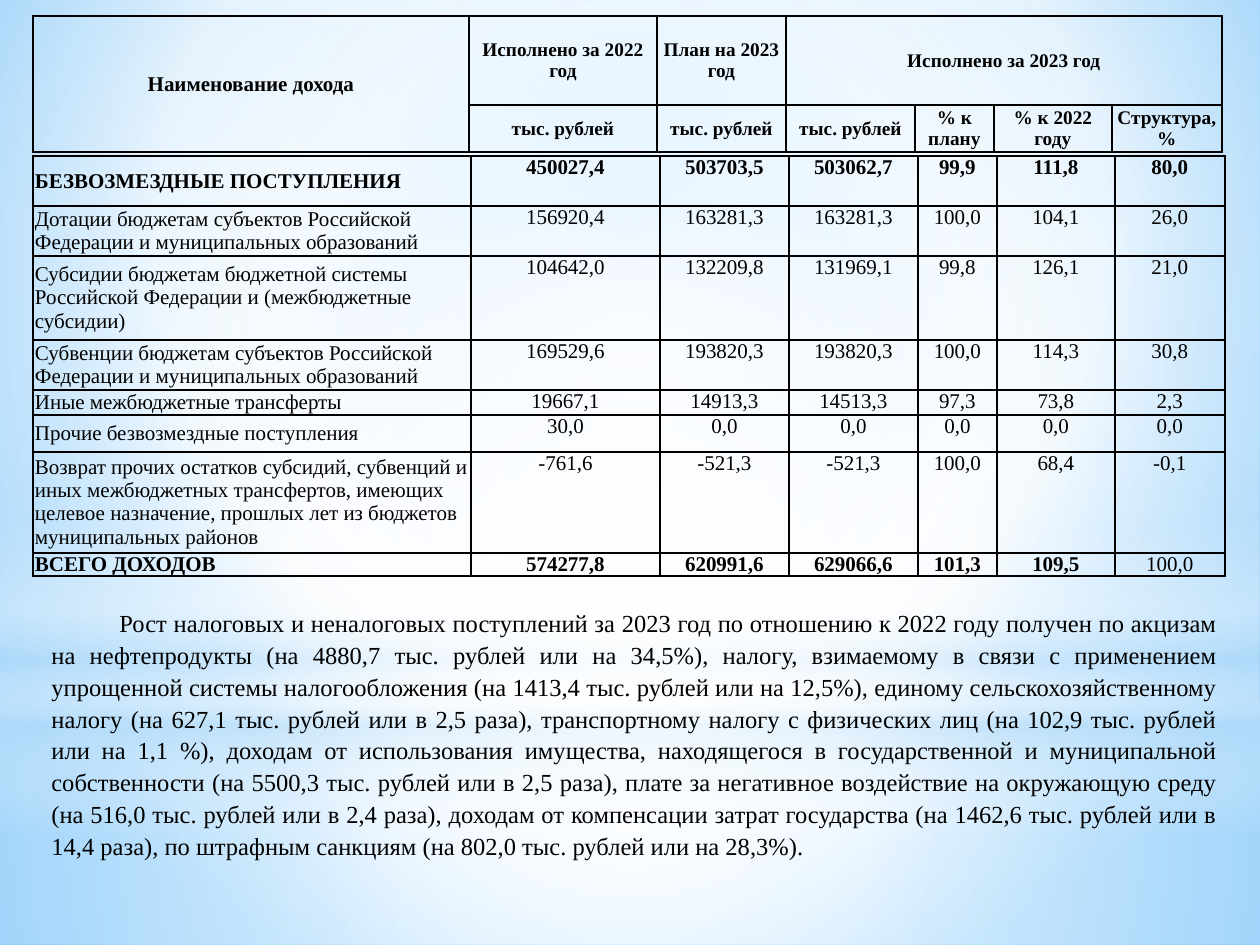
"""Builds the slide on non-tax transfers: a header table, a data table and a comment."""
from pptx import Presentation
from pptx.dml.color import RGBColor
from pptx.enum.shapes import MSO_SHAPE as SHAPE
from pptx.enum.text import MSO_ANCHOR as ANCHOR, PP_ALIGN as ALIGN
from pptx.oxml import parse_xml
from pptx.oxml.ns import nsdecls, qn
from pptx.util import Pt

THEME = {"font": "Times New Roman", "ink": "000000", "white": "FFFFFF", "sky": "B4DCFA",
         "bg_light": "9ED5FF", "bg_deep": "5BB9FF",
         "table": 12, "header": 11, "body": 14, "border": 1}
WHITE, SKY = THEME["white"], THEME["sky"]
SCALE = 914400 / 126
WIDTH, HEIGHT = 1260, 945
CENTRE = (50, 50, 50, 50)

BG_STOPS = [(0, THEME["bg_light"], 100), (60, WHITE, 100), (100, THEME["bg_deep"], 100)]
LAYERS = [
    (SHAPE.RECTANGLE, (0, 703, WIDTH, 242), CENTRE,
     [(0, WHITE, 91), (37, WHITE, 76), (100, SKY, 79)]),
    (SHAPE.RECTANGLE, (0, 0, WIDTH, 703), CENTRE,
     [(0, WHITE, 89), (48, WHITE, 62), (100, SKY, 79)]),
    (SHAPE.RECTANGLE, (0, 519, WIDTH, 315), None,
     [(0, WHITE, 0), (29, WHITE, 30), (45, SKY, 40), (55, WHITE, 26), (65, SKY, 60),
      (100, WHITE, 0)]),
    (SHAPE.OVAL, (0, 220, WIDTH, 703), CENTRE, [(0, WHITE, 100), (56, WHITE, 0)]),
]

HEADER = [
    ["Наименование дохода", "Исполнено за 2022 год", "План на 2023 год",
     "Исполнено за 2023 год", "", "", ""],
    ["", "тыс. рублей", "тыс. рублей", "тыс. рублей", "% к плану", "% к 2022 году",
     "Структура, %"],
]
HEADER_SPANS = [((0, 0), (1, 0)), ((0, 3), (0, 6))]
INCOME = [
    ["БЕЗВОЗМЕЗДНЫЕ ПОСТУПЛЕНИЯ",
     "450027,4", "503703,5", "503062,7", "99,9", "111,8", "80,0"],
    ["Дотации бюджетам субъектов Российской Федерации и муниципальных образований",
     "156920,4", "163281,3", "163281,3", "100,0", "104,1", "26,0"],
    ["Субсидии бюджетам бюджетной системы Российской Федерации и (межбюджетные субсидии)",
     "104642,0", "132209,8", "131969,1", "99,8", "126,1", "21,0"],
    ["Субвенции бюджетам субъектов Российской Федерации и муниципальных образований",
     "169529,6", "193820,3", "193820,3", "100,0", "114,3", "30,8"],
    ["Иные межбюджетные трансферты",
     "19667,1", "14913,3", "14513,3", "97,3", "73,8", "2,3"],
    ["Прочие безвозмездные поступления", "30,0", "0,0", "0,0", "0,0", "0,0", "0,0"],
    ["Возврат прочих остатков субсидий, субвенций и иных межбюджетных трансфертов, "
     "имеющих целевое назначение, прошлых лет из бюджетов муниципальных районов",
     "-761,6", "-521,3", "-521,3", "100,0", "68,4", "-0,1"],
    ["ВСЕГО ДОХОДОВ", "574277,8", "620991,6", "629066,6", "101,3", "109,5", "100,0"],
]
COMMENT = (
    "Рост налоговых и неналоговых поступлений за 2023 год по отношению к 2022 году получен "
    "по акцизам на нефтепродукты (на 4880,7 тыс. рублей или на 34,5%), налогу, взимаемому в "
    "связи с применением упрощенной системы налогообложения (на 1413,4 тыс. рублей или на "
    "12,5%), единому сельскохозяйственному налогу (на 627,1 тыс. рублей или в 2,5 раза), "
    "транспортному налогу с физических лиц (на 102,9 тыс. рублей или на 1,1 %), доходам от "
    "использования имущества, находящегося в государственной и муниципальной собственности "
    "(на 5500,3 тыс. рублей или в 2,5 раза), плате за негативное воздействие на окружающую "
    "среду (на 516,0 тыс. рублей или в 2,4 раза), доходам от компенсации затрат государства "
    "(на 1462,6 тыс. рублей или в 14,4 раза), по штрафным санкциям (на 802,0 тыс. рублей "
    "или на 28,3%).")

VALUE_COLS = [129, 129, 79, 118, 110]
HEADER_GRID = {"left": 33, "top": 16, "cols": [436, 188] + VALUE_COLS, "rows": [89, 47]}
INCOME_GRID = {"left": 33, "top": 156, "cols": [438, 189] + VALUE_COLS,
               "rows": [50, 50, 84, 50, 25, 37, 101, 22]}
COMMENT_BOX = (39, 600, 1191, 251)


def px(n):
    return int(n * SCALE)


def assign(obj, values):
    for name, value in values.items():
        setattr(obj, name, value)


def paint(holder, stops, focus):
    """Swap the empty fill of an element for a gradient."""
    gs = "".join(f'<a:gs pos="{pos * 1000}"><a:srgbClr val="{color}">'
                 f'<a:alpha val="{alpha * 1000}"/></a:srgbClr></a:gs>'
                 for pos, color, alpha in stops)
    shade = '<a:lin ang="5400000" scaled="0"/>'
    if focus:
        sides = " ".join(f'{side}="{n * 1000}"' for side, n in zip("ltrb", focus))
        shade = f'<a:path path="circle"><a:fillToRect {sides}/></a:path>'
    empty = holder.find(".//" + qn("a:noFill"))
    empty.getparent().replace(empty, parse_xml(
        f'<a:gradFill {nsdecls("a")} rotWithShape="1"><a:gsLst>{gs}</a:gsLst>{shade}</a:gradFill>'))


def write(tf, text, size, align, bold=False):
    p = tf.paragraphs[0]
    p.alignment = align
    r = p.add_run()
    r.text = text
    assign(r.font, {"name": THEME["font"], "size": Pt(size), "bold": bold})
    r.font.color.rgb = RGBColor.from_string(THEME["ink"])
    return p


def frame(cell):
    tcPr = cell._tc.get_or_add_tcPr()
    for side in "LRTB":
        tcPr.append(parse_xml(
            f'<a:ln{side} {nsdecls("a")} w="{Pt(THEME["border"])}"><a:solidFill>'
            f'<a:srgbClr val="{THEME["ink"]}"/></a:solidFill></a:ln{side}>'))
    cell.fill.background()


def add_grid(s, data, grid, style, spans=()):
    cols, rows = grid["cols"], grid["rows"]
    box = grid["left"], grid["top"], sum(cols), sum(rows)
    table = s.shapes.add_table(len(rows), len(cols), *map(px, box)).table
    assign(table, {"first_row": False, "horz_banding": False})
    for col, width in zip(table.columns, cols):
        col.width = px(width)
    for i, (row, height) in enumerate(zip(table.rows, rows)):
        row.height = px(height)
        for j, cell in enumerate(row.cells):
            size, align, bold, anchor, inset = style(i, j)
            assign(cell, {"margin_left": px(inset), "margin_right": px(inset),
                          "margin_top": 0, "margin_bottom": 0, "vertical_anchor": anchor})
            write(cell.text_frame, data[i][j], size, align, bold)
            frame(cell)
    for first, last in spans:
        table.cell(*first).merge(table.cell(*last))


def header_style(i, j):
    return THEME["header" if j else "table"], ALIGN.CENTER, True, ANCHOR.MIDDLE, 2


def income_style(i, j):
    last = len(INCOME) - 1
    bold = i in (0, last) and (i, j) != (last, 6)
    if j == 0:
        return THEME["table"], ALIGN.LEFT, bold, ANCHOR.MIDDLE, 2
    return THEME["table"], ALIGN.CENTER, bold, ANCHOR.TOP, 9


def main():
    prs = Presentation()
    assign(prs, {"slide_width": px(WIDTH), "slide_height": px(HEIGHT)})
    s = prs.slides.add_slide(prs.slide_layouts[6])
    s.background.fill.background()
    paint(s._element, BG_STOPS, (20, 10, 20, 60))
    for kind, box, focus, stops in LAYERS:
        sp = s.shapes.add_shape(kind, *map(px, box))
        sp.shadow.inherit = False
        sp.fill.background()
        paint(sp._element, stops, focus)
        sp.line.fill.background()
    add_grid(s, INCOME, INCOME_GRID, income_style)
    add_grid(s, HEADER, HEADER_GRID, header_style, HEADER_SPANS)
    tf = s.shapes.add_textbox(*map(px, COMMENT_BOX)).text_frame
    tf.word_wrap = True
    p = write(tf, COMMENT, THEME["body"], ALIGN.JUSTIFY)
    p.line_spacing = 1.08
    p._p.get_or_add_pPr().set("indent", str(px(68)))
    prs.save("out.pptx")


if __name__ == "__main__":
    main()
